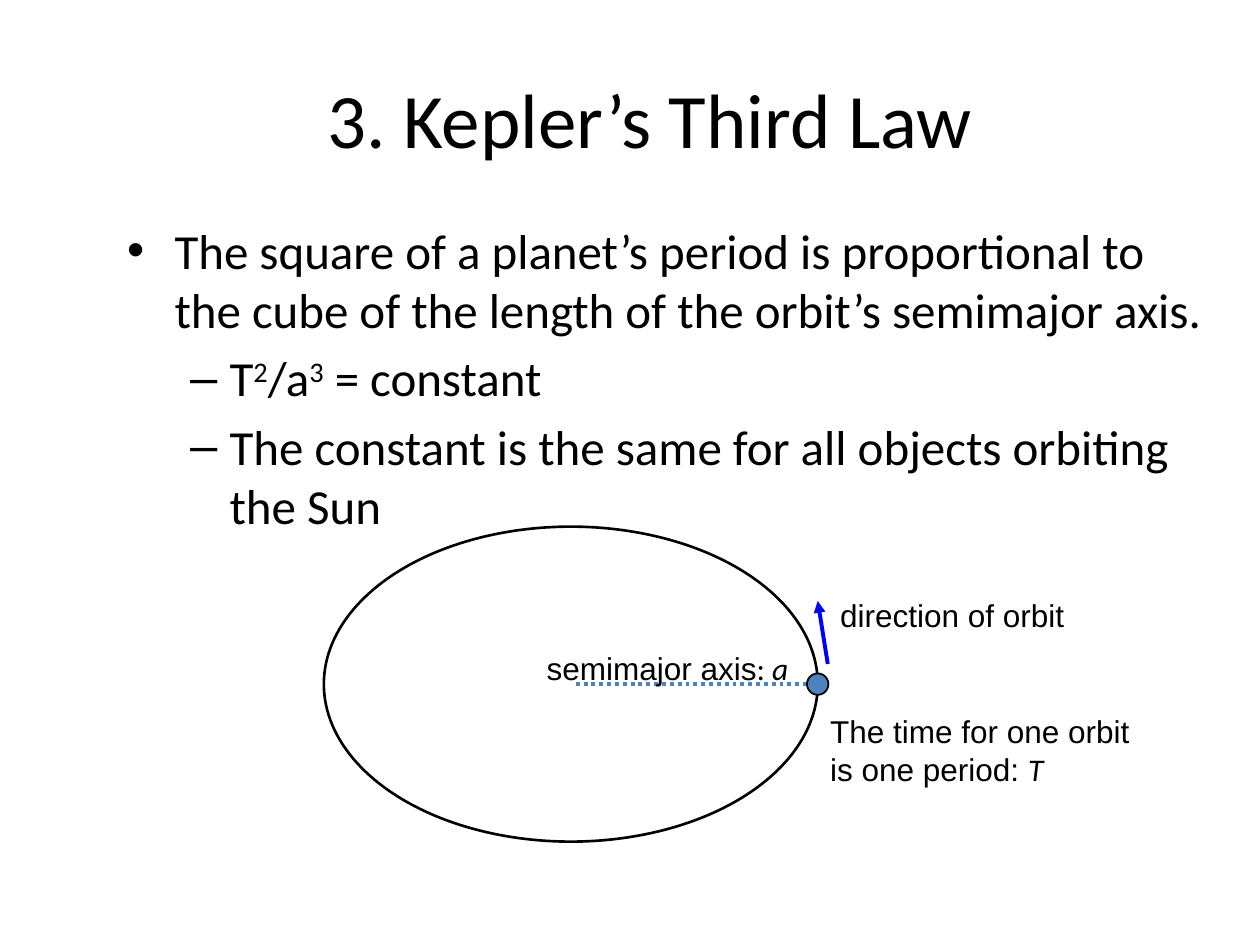
from lxml.etree import SubElement
from pptx import Presentation
from pptx.dml.color import RGBColor
from pptx.enum.dml import MSO_LINE
from pptx.enum.shapes import MSO_CONNECTOR, MSO_SHAPE
from pptx.enum.text import MSO_ANCHOR, MSO_AUTO_SIZE, PP_ALIGN
from pptx.oxml.ns import qn
from pptx.util import Inches, Pt

COLORS = {"ink": "000000", "planet": "4F81BD", "arrow": "0000FF"}


def color(name):
    return RGBColor.from_string(COLORS[name])


def place(shape, left, top, width, height):
    shape.left, shape.top = Inches(left), Inches(top)
    shape.width, shape.height = Inches(width), Inches(height)


def write(para, text, size=18, font="Arial", italic=None, raised=False):
    """Add a run of text to a paragraph."""
    run = para.add_run()
    run.text = text
    run.font.size, run.font.name, run.font.italic = Pt(size), font, italic
    run.font.color.rgb = color("ink")
    if raised:
        run._r.get_or_add_rPr().set("baseline", "30000")


def add_title(slide, text):
    title = slide.shapes.title
    place(title, 0.91, 0.31, 8.5, 1.25)
    title.text_frame.vertical_anchor = MSO_ANCHOR.MIDDLE
    para = title.text_frame.paragraphs[0]
    para.alignment = PP_ALIGN.CENTER
    write(para, text, size=44, font="Calibri")


def add_list(slide, items):
    """Fill the body with (level, parts) items; every second part is raised."""
    body = slide.placeholders[1]
    place(body, 0.91, 1.7, 8.74, 4.5)
    frame = body.text_frame
    frame.auto_size = MSO_AUTO_SIZE.NONE
    for i, (level, parts) in enumerate(items):
        para = frame.add_paragraph() if i else frame.paragraphs[0]
        para.level = level
        for j, part in enumerate(parts):
            write(para, part, size=28, font="Calibri", raised=j % 2 == 1)


def add_oval(slide, mid, size, weight, fill=None):
    """Draw an ellipse around its centre."""
    (x, y), (w, h) = mid, size
    oval = slide.shapes.add_shape(MSO_SHAPE.OVAL, Inches(x - w / 2),
                                  Inches(y - h / 2), Inches(w), Inches(h))
    oval.shadow.inherit = False
    if fill:
        oval.fill.solid()
        oval.fill.fore_color.rgb = color(fill)
    else:
        oval.fill.background()
    oval.line.color.rgb = color("ink")
    oval.line.width = Pt(weight)


def add_line(slide, start, end, tint, dash=None, arrow=False):
    ends = [Inches(v) for v in (*start, *end)]
    line = slide.shapes.add_connector(MSO_CONNECTOR.STRAIGHT, *ends)
    line.line.color.rgb = color(tint)
    line.line.width = Pt(2.25)
    if dash:
        line.line.dash_style = dash
    if arrow:
        SubElement(line.line._get_or_add_ln(), qn("a:tailEnd"), type="triangle")
    SubElement(line._element.spPr, qn("a:effectLst"))


def add_label(slide, box, *runs, wrap=False):
    """Add a text box of (text, format) runs."""
    label = slide.shapes.add_textbox(*(Inches(v) for v in box))
    frame = label.text_frame
    frame.word_wrap = wrap
    frame.auto_size = MSO_AUTO_SIZE.SHAPE_TO_FIT_TEXT
    for text, style in runs:
        write(frame.paragraphs[0], text, **style)


def add_orbit(slide):
    mid, size = (4.53, 5.43), (3.92, 2.5)
    planet = (mid[0] + size[0] / 2, mid[1])
    symbol = {"font": "Calibri", "italic": True}
    add_oval(slide, mid, size, 1.5)
    add_line(slide, (4.57, 5.43), planet, "planet", dash=MSO_LINE.ROUND_DOT)
    add_oval(slide, planet, (0.17, 0.17), 1, fill="planet")
    add_label(slide, (4.24, 5.1, 2.12, 0.4), ("semimajor axis", {}),
              (": ", {"font": "Calibri"}), ("a", symbol))
    add_line(slide, (6.57, 5.27), (6.49, 4.77), "arrow", arrow=True)
    add_label(slide, (6.57, 4.68, 1.98, 0.4), ("direction of orbit", {}))
    add_label(slide, (6.49, 5.6, 2.58, 0.7),
              ("The time for one orbit is one period: ", {}), ("T", symbol),
              wrap=True)


def main():
    deck = Presentation()
    deck.slide_width, deck.slide_height = Inches(10), Inches(7.5)
    slide = deck.slides.add_slide(deck.slide_layouts[1])
    add_title(slide, "3. Kepler’s Third Law")
    add_list(slide, [
        (0, ["The square of a planet’s period is proportional to the cube "
             "of the length of the orbit’s semimajor axis."]),
        (1, ["T", "2", "/a", "3", " = constant"]),
        (1, ["The constant is the same for all objects orbiting the Sun"]),
    ])
    add_orbit(slide)
    deck.save("out.pptx")


if __name__ == "__main__":
    main()
